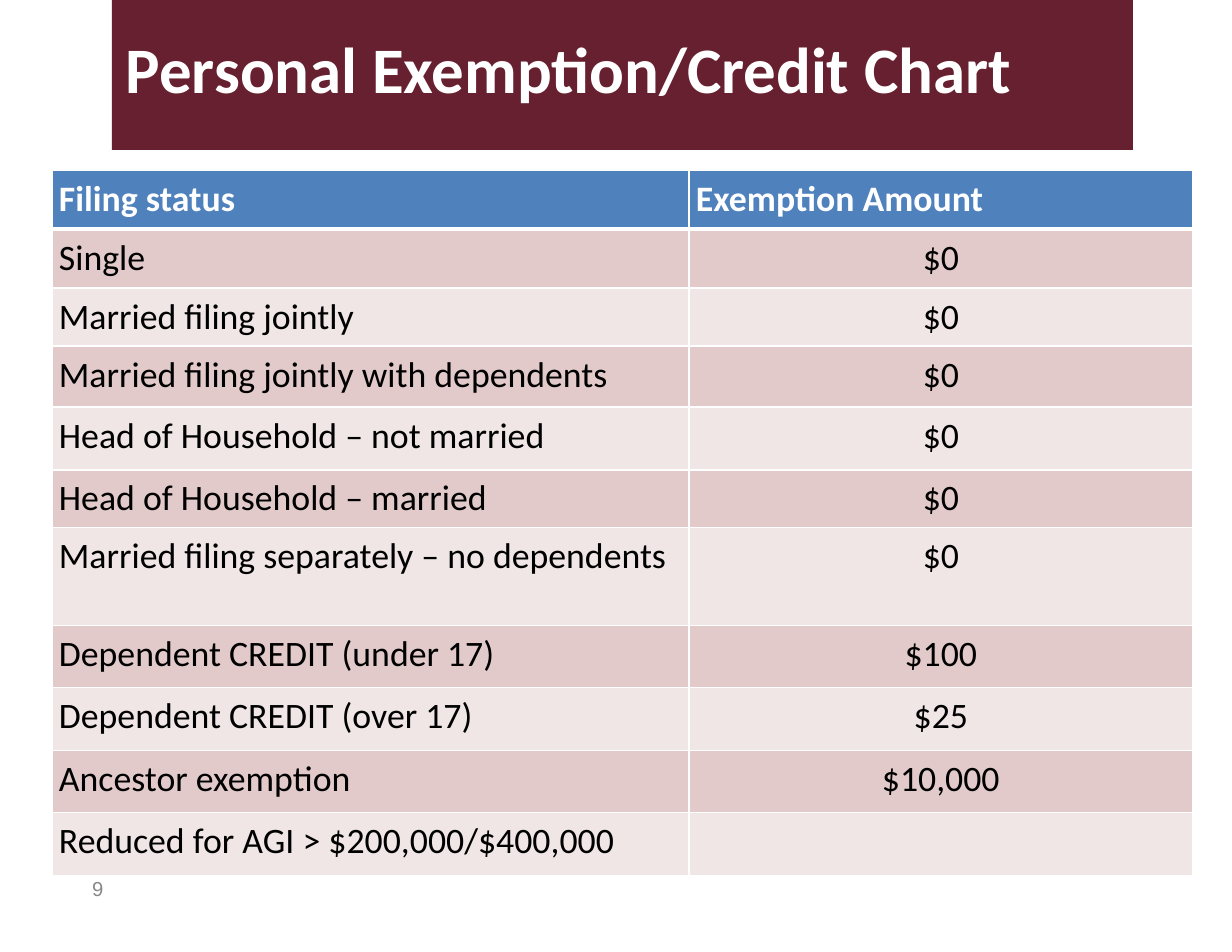
import pptx
import pptx.util
import pptx.dml.color
import pptx.enum.shapes
import pptx.enum.text
import pptx.oxml

PX = 914400 // 112
PT = 12700
COLORS = {"maroon": "67202F", "header": "4F81BD", "dark band": "E2CACA",
          "light band": "F1E6E6", "white": "FFFFFF", "black": "000000",
          "gray": "888888"}

TITLE = "Personal Exemption/Credit Chart"
PAGE_NUMBER = "9"
HEADER = ("Filing status", "Exemption Amount")
EXEMPTIONS = [
    ("Single", "$0"),
    ("Married filing jointly", "$0"),
    ("Married filing jointly with dependents", "$0"),
    ("Head of Household – not married", "$0"),
    ("Head of Household – married", "$0"),
    ("Married filing separately – no dependents", "$0"),
    ("Dependent CREDIT (under 17)", "$100"),
    ("Dependent CREDIT (over 17)", "$25"),
    ("Ancestor exemption", "$10,000"),
    ("Reduced for AGI > $200,000/$400,000", ""),
]
COLUMN_WIDTHS = (637, 504)
ROW_HEIGHTS = (59, 59, 58, 61, 63, 58, 98, 62, 63, 62, 63)

TITLE_FONT = {"name": "Calibri", "size": 41.7, "bold": True, "color": "white"}
HEADER_FONT = {"name": "Calibri", "size": 23, "bold": True, "color": "white"}
BODY_FONT = {"name": "Calibri", "size": 23, "bold": False, "color": "black"}
NUMBER_FONT = {"name": "Arial", "size": 13, "bold": False, "color": "gray"}

ALIGN = pptx.enum.text.PP_ALIGN
MIDDLE = pptx.enum.text.MSO_ANCHOR.MIDDLE


def px(*values):
    return [v * PX for v in values]


def rgb(name):
    return pptx.dml.color.RGBColor.from_string(COLORS[name])


def set_fill(target, name):
    target.fill.solid()
    target.fill.fore_color.rgb = rgb(name)


def set_margins(target):
    for side in ("left", "right", "top", "bottom"):
        setattr(target, f"margin_{side}", 7 * PX)


def write(tf, text, style, align=ALIGN.LEFT):
    p = tf.paragraphs[0]
    p.alignment = align
    font = p.font
    if text:
        r = p.add_run()
        r.text = text
        font = r.font
    values = {"name": style["name"], "size": pptx.util.Pt(style["size"]),
              "bold": style["bold"]}
    for key, value in values.items():
        setattr(font, key, value)
    font.color.rgb = rgb(style["color"])
    return p


def set_borders(cell, bottom_width):
    tc_pr = cell._tc.get_or_add_tcPr()
    for side, width in (("L", 1), ("R", 1), ("T", 1), ("B", bottom_width)):
        tc_pr.append(pptx.oxml.parse_xml(
            '<a:ln{0} xmlns:a="http://schemas.openxmlformats.org/drawingml/2006/main"'
            ' w="{1}"><a:solidFill><a:srgbClr val="{2}"/></a:solidFill></a:ln{0}>'
            .format(side, width * PT, COLORS["white"])))


def add_title(s):
    sp = s.shapes.add_shape(pptx.enum.shapes.MSO_SHAPE.RECTANGLE,
                            *px(112, -4, 1021, 154))
    sp.shadow.inherit = False
    set_fill(sp, "maroon")
    sp.line.fill.background()
    tf = sp.text_frame
    tf.word_wrap = True
    tf.vertical_anchor = MIDDLE
    set_margins(tf)
    p = write(tf, TITLE, TITLE_FONT)
    p.line_spacing = 0.9
    p_pr = p._p.get_or_add_pPr()
    p_pr.set("marL", "0")
    p_pr.set("indent", str(7 * PX))


def add_exemption_table(s):
    rows = [HEADER] + EXEMPTIONS
    table = s.shapes.add_table(
        len(rows), len(HEADER),
        *px(52, 170, sum(COLUMN_WIDTHS), sum(ROW_HEIGHTS))).table
    for column, width in zip(table.columns, COLUMN_WIDTHS):
        column.width = width * PX
    for row, height in zip(table.rows, ROW_HEIGHTS):
        row.height = height * PX
    for i, texts in enumerate(rows):
        is_header = i == 0
        band = "header" if is_header else ("light band", "dark band")[i % 2]
        for j, text in enumerate(texts):
            cell = table.cell(i, j)
            set_margins(cell)
            set_borders(cell, 3 if is_header else 1)
            set_fill(cell, band)
            write(cell.text_frame, text,
                  HEADER_FONT if is_header else BODY_FONT,
                  ALIGN.CENTER if j and not is_header else ALIGN.LEFT)


def add_page_number(s):
    tf = s.shapes.add_textbox(*px(85, 870, 25, 36)).text_frame
    tf.word_wrap = False
    tf.vertical_anchor = MIDDLE
    set_margins(tf)
    write(tf, PAGE_NUMBER, NUMBER_FONT)


def main():
    prs = pptx.Presentation()
    prs.slide_width, prs.slide_height = px(1232, 952)
    s = prs.slides.add_slide(prs.slide_layouts[6])
    add_title(s)
    add_page_number(s)
    add_exemption_table(s)
    prs.save("out.pptx")


if __name__ == "__main__":
    main()
